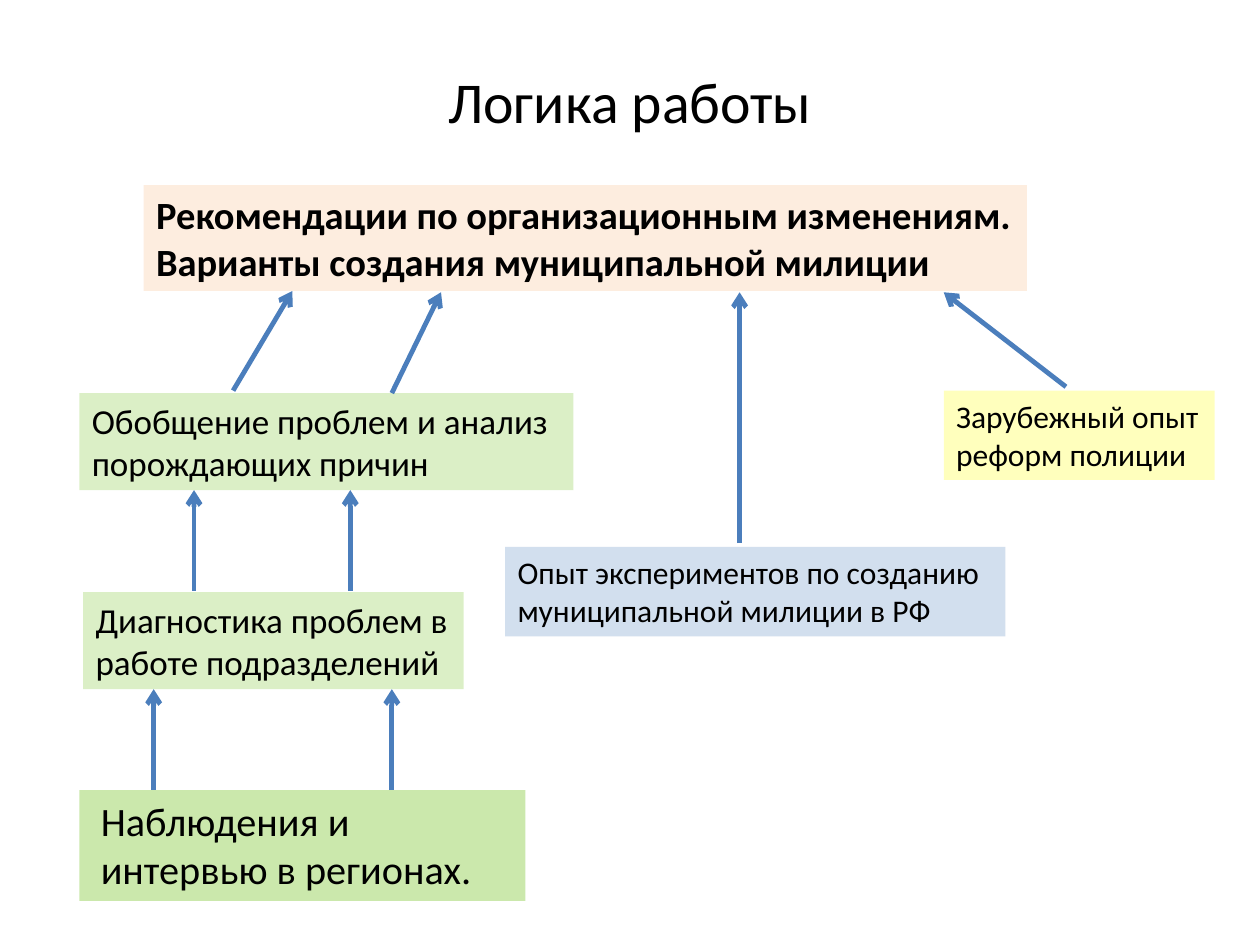
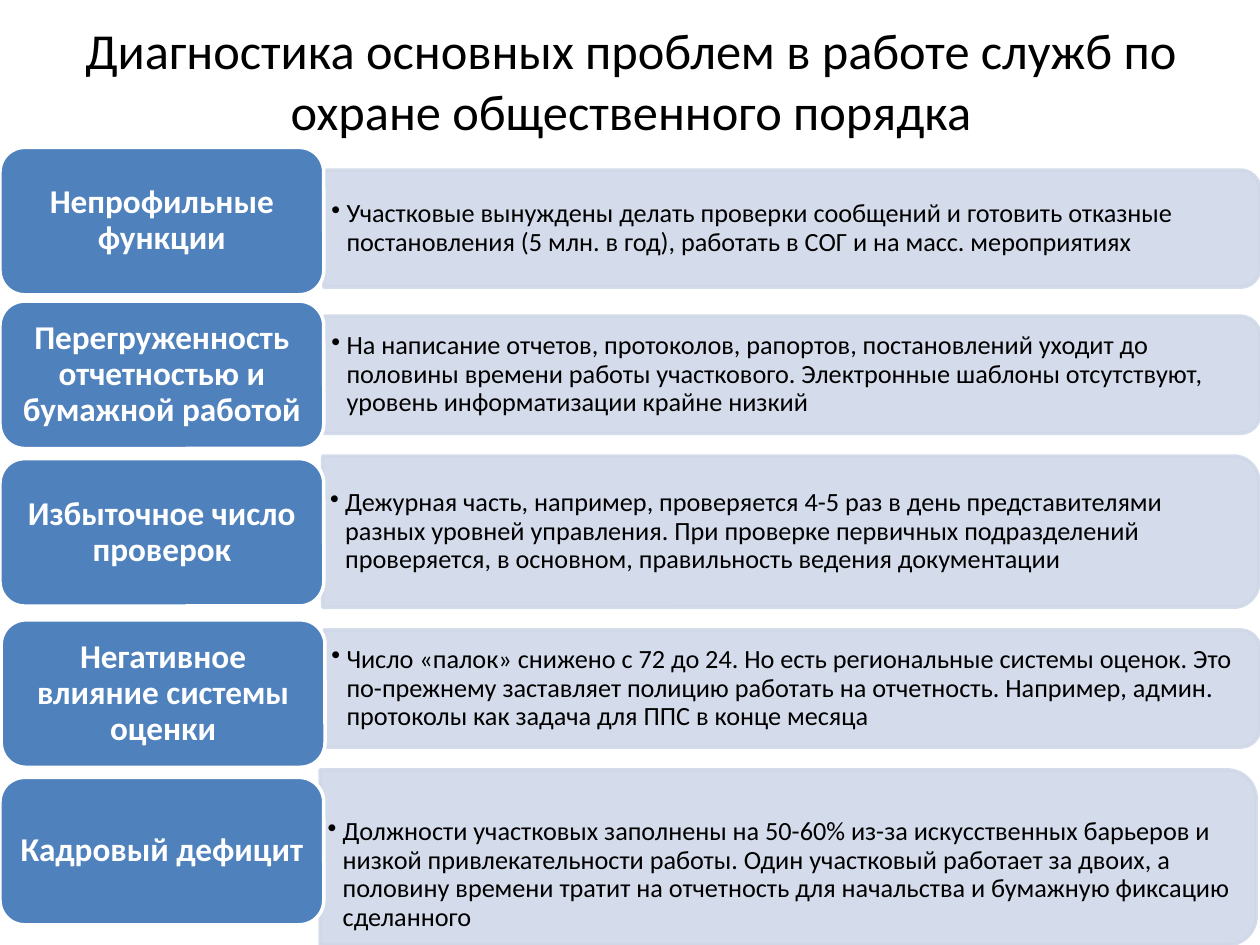
"""Build two slides: the logic of the study and the diagnosis of policing problems."""
from dataclasses import dataclass

import lxml.etree
import pptx
import pptx.dml.color
import pptx.enum.dml
import pptx.enum.shapes
import pptx.enum.text
import pptx.oxml.ns
import pptx.util

RGBColor = pptx.dml.color.RGBColor
Shapes = pptx.enum.shapes.MSO_SHAPE
Align = pptx.enum.text.PP_ALIGN
Anchor = pptx.enum.text.MSO_ANCHOR

COLUMNS, ROWS = 100, 75
CELL = pptx.util.Inches(0.1)
FONT = "Calibri"

BLACK = RGBColor(0x00, 0x00, 0x00)
WHITE = RGBColor(0xFF, 0xFF, 0xFF)
GREEN = RGBColor(0x92, 0xD0, 0x50)
ORANGE = RGBColor(0xF7, 0x96, 0x46)
LIGHT_BLUE = RGBColor(0x95, 0xB3, 0xD7)
YELLOW = RGBColor(0xFF, 0xFF, 0x00)
ARROW_BLUE = RGBColor(0x4B, 0x7E, 0xBC)
LABEL_BLUE = RGBColor(0x4F, 0x81, 0xBD)
BAR_BLUE = RGBColor(0xD0, 0xD8, 0xE8)


@dataclass(frozen=True)
class Area:
    """A rectangle in grid columns and rows."""
    column: float
    row: float
    width: float
    height: float


@dataclass(frozen=True)
class Step:
    """A tinted box of the study's logic."""
    area: Area
    lines: tuple[str, ...]
    tint: RGBColor
    opacity: int
    size: float
    bold: bool = False
    indent: float = 0


@dataclass(frozen=True)
class Arrow:
    """An arrow between two grid points."""
    start: tuple[float, float]
    end: tuple[float, float]


@dataclass(frozen=True)
class Problem:
    """A problem label with its explanatory bar."""
    label: str
    label_row: float
    detail: str
    bar: Area
    label_column: float = 0
    text_drop: float = 0


STEPS = [
    Step(Area(6.3, 62.7, 35.4, 8.8), ("Наблюдения и", "интервью в регионах."), GREEN, 47, 23, indent=0.7),
    Step(Area(6.6, 47, 30.2, 7.7), ("Диагностика проблем в", "работе подразделений"), GREEN, 32, 20),
    Step(Area(6.3, 31.2, 39.2, 7.7), ("Обобщение проблем и анализ", "порождающих причин"), GREEN, 32, 20),
    Step(Area(11.4, 14.7, 70.1, 8.4),
         ("Рекомендации по организационным изменениям. Варианты создания муниципальной милиции",),
         ORANGE, 17, 22, bold=True),
    Step(Area(40.1, 43.4, 39.7, 7.1), ("Опыт экспериментов по созданию", "муниципальной милиции в РФ"),
         LIGHT_BLUE, 42, 18),
    Step(Area(74.9, 31, 21.5, 7.1), ("Зарубежный опыт", "реформ полиции"), YELLOW, 26, 18),
]

ARROWS = [
    *(Arrow((column, 62.7), (column, 54.7)) for column in (12.2, 31.1)),
    *(Arrow((column, 46.9), (column, 38.9)) for column in (15.4, 27.8)),
    Arrow((18.5, 31), (23.2, 23.1)),
    Arrow((31.1, 31.2), (35, 23.2)),
    Arrow((58.7, 43.1), (58.7, 23.2)),
    Arrow((84.6, 30.7), (74.9, 23.2)),
]

BAR_LEFT, BAR_WIDTH, BAR_HEIGHT = 25.7, 74.3, 9.3
LABEL_WIDTH, LABEL_HEIGHT = 25.7, 11.7

PROBLEMS = [
    Problem("Непрофильные функции", 11.7,
            "Участковые вынуждены делать проверки сообщений и готовить отказные постановления "
            "(5 млн. в год), работать в СОГ и на масс. мероприятиях",
            Area(BAR_LEFT, 13.5, BAR_WIDTH, BAR_HEIGHT)),
    Problem("Перегруженность отчетностью и бумажной работой", 23.9,
            "На написание отчетов, протоколов, рапортов, постановлений уходит до половины времени "
            "работы участкового. Электронные шаблоны отсутствуют, уровень информатизации крайне низкий",
            Area(BAR_LEFT, 25.1, BAR_WIDTH, BAR_HEIGHT)),
    Problem("Избыточное число проверок", 36.4,
            "Дежурная часть, например, проверяется 4-5 раз в день представителями разных уровней "
            "управления. При проверке первичных подразделений проверяется, в основном, "
            "правильность ведения документации",
            Area(25.6, 36.2, BAR_WIDTH, 12)),
    Problem("Негативное влияние системы оценки", 49.2,
            "Число «палок» снижено с 72 до 24. Но есть региональные системы оценок. Это по-прежнему "
            "заставляет полицию работать на отчетность. Например, админ. протоколы как задача "
            "для ППС в конце месяца",
            Area(BAR_LEFT, 50, BAR_WIDTH, BAR_HEIGHT), label_column=0.1),
    Problem("Кадровый дефицит", 61.7,
            "Должности участковых заполнены на 50-60% из-за искусственных барьеров и низкой "
            "привлекательности работы. Один участковый работает за двоих, а половину времени тратит "
            "на отчетность для начальства и бумажную фиксацию сделанного",
            Area(25.4, 61.1, BAR_WIDTH, 13.9), text_drop=2.8),
]


def cells(count: float) -> int:
    """Convert a count of grid cells to a length."""
    return round(count * CELL)


def place(area: Area) -> tuple[int, int, int, int]:
    """Convert an area to left, top, width and height."""
    return cells(area.column), cells(area.row), cells(area.width), cells(area.height)


def add_element(parent, tag: str, **attributes: str):
    """Append a drawing element to a parent element."""
    return lxml.etree.SubElement(parent, pptx.oxml.ns.qn(tag), attributes)


def paint(fill, color: RGBColor, opacity: int = 100) -> None:
    """Give a fill a solid colour with an opacity in percent."""
    fill.solid()
    fill.fore_color.rgb = color
    if opacity < 100:
        # python-pptx exposes no public opacity property
        color_element = fill._xPr.find(pptx.oxml.ns.qn("a:solidFill"))[0]
        add_element(color_element, "a:alpha", val=str(opacity * 1000))


def write(frame, lines: tuple[str, ...], size: float, color: RGBColor = BLACK, bold: bool = False,
          align=Align.LEFT, anchor=Anchor.TOP, spacing: float = 1) -> None:
    """Write formatted paragraphs into a text frame."""
    frame.word_wrap = True
    frame.vertical_anchor = anchor
    frame.text = "\n".join(lines)
    for paragraph in frame.paragraphs:
        paragraph.alignment = align
        paragraph.line_spacing = spacing
        font = paragraph.runs[0].font
        font.name, font.size, font.bold = FONT, pptx.util.Pt(size), bold
        font.color.rgb = color


def set_insets(frame, sides: float, top: float, bottom: float) -> None:
    """Set text insets in grid cells."""
    frame.margin_left = frame.margin_right = cells(sides)
    frame.margin_top, frame.margin_bottom = cells(top), cells(bottom)


def add_block(slide, kind, area: Area, color: RGBColor, opacity: int = 100):
    """Add a filled shape without a shadow or an outline."""
    block = slide.shapes.add_shape(kind, *place(area))
    block.shadow.inherit = False
    paint(block.fill, color, opacity)
    block.line.fill.background()
    return block


def add_title(slide, area: Area, title: str, size: float) -> None:
    """Add a centred slide title."""
    frame = slide.shapes.add_textbox(*place(area)).text_frame
    write(frame, (title,), size, align=Align.CENTER, anchor=Anchor.MIDDLE)


def add_step(slide, step: Step) -> None:
    """Draw one box of the study's logic."""
    box = add_block(slide, Shapes.RECTANGLE, step.area, step.tint, step.opacity)
    write(box.text_frame, step.lines, step.size, bold=step.bold)
    box.text_frame.margin_left = cells(1 + step.indent)


def add_arrow(slide, arrow: Arrow) -> None:
    """Draw an arrow between two grid points."""
    points = [cells(value) for value in (*arrow.start, *arrow.end)]
    link = slide.shapes.add_connector(pptx.enum.shapes.MSO_CONNECTOR.STRAIGHT, *points)
    link.line.width = pptx.util.Pt(2.75)
    link.line.color.rgb = ARROW_BLUE
    properties = link.element.spPr
    add_element(properties.find(pptx.oxml.ns.qn("a:ln")), "a:tailEnd", type="arrow")
    add_element(properties, "a:effectLst")


def add_problem(slide, problem: Problem) -> None:
    """Draw a problem label and its bar, rounded on the right."""
    bar = problem.bar
    offset = (bar.width - bar.height) / 2
    upright = Area(bar.column + offset, bar.row - offset, bar.height, bar.width)
    panel = add_block(slide, Shapes.ROUND_2_SAME_RECTANGLE, upright, BAR_BLUE, 90)
    panel.rotation = 90
    panel.line.width = pptx.util.Pt(2)
    paint(panel.line.fill, BAR_BLUE, 90)

    detail_area = Area(bar.column, bar.row, bar.width - 0.5, bar.height)
    detail = slide.shapes.add_textbox(*place(detail_area)).text_frame
    set_insets(detail, 0.6, 0.3 + problem.text_drop, 0.3)
    write(detail, (problem.detail,), 15, anchor=Anchor.MIDDLE, spacing=0.9)
    bullet = detail.paragraphs[0]._p.get_or_add_pPr()
    bullet.set("marL", str(cells(1.2)))
    bullet.set("indent", str(-cells(1.2)))
    add_element(bullet, "a:buChar", char="•")

    label_area = Area(problem.label_column, problem.label_row, LABEL_WIDTH, LABEL_HEIGHT)
    label = add_block(slide, Shapes.ROUNDED_RECTANGLE, label_area, LABEL_BLUE)
    label.line.width = pptx.util.Pt(2)
    paint(label.line.fill, WHITE)
    set_insets(label.text_frame, 0.8, 1, 1)
    write(label.text_frame, (problem.label,), 19, WHITE, True, Align.CENTER, Anchor.MIDDLE, 0.9)


def main() -> None:
    """Build and save the presentation."""
    deck = pptx.Presentation()
    deck.slide_width, deck.slide_height = cells(COLUMNS), cells(ROWS)
    blank = deck.slide_layouts[6]

    logic = deck.slides.add_slide(blank)
    add_title(logic, Area(5, 3.3, 90, 9.3), "Логика работы", 33)
    for step in STEPS:
        add_step(logic, step)
    for arrow in ARROWS:
        add_arrow(logic, arrow)

    diagnosis = deck.slides.add_slide(blank)
    add_title(diagnosis, Area(5.1, 2.1, 90, 8.5),
              "Диагностика основных проблем в работе служб по охране общественного порядка", 28.8)
    for problem in PROBLEMS:
        add_problem(diagnosis, problem)

    deck.save("out.pptx")


if __name__ == "__main__":
    main()
